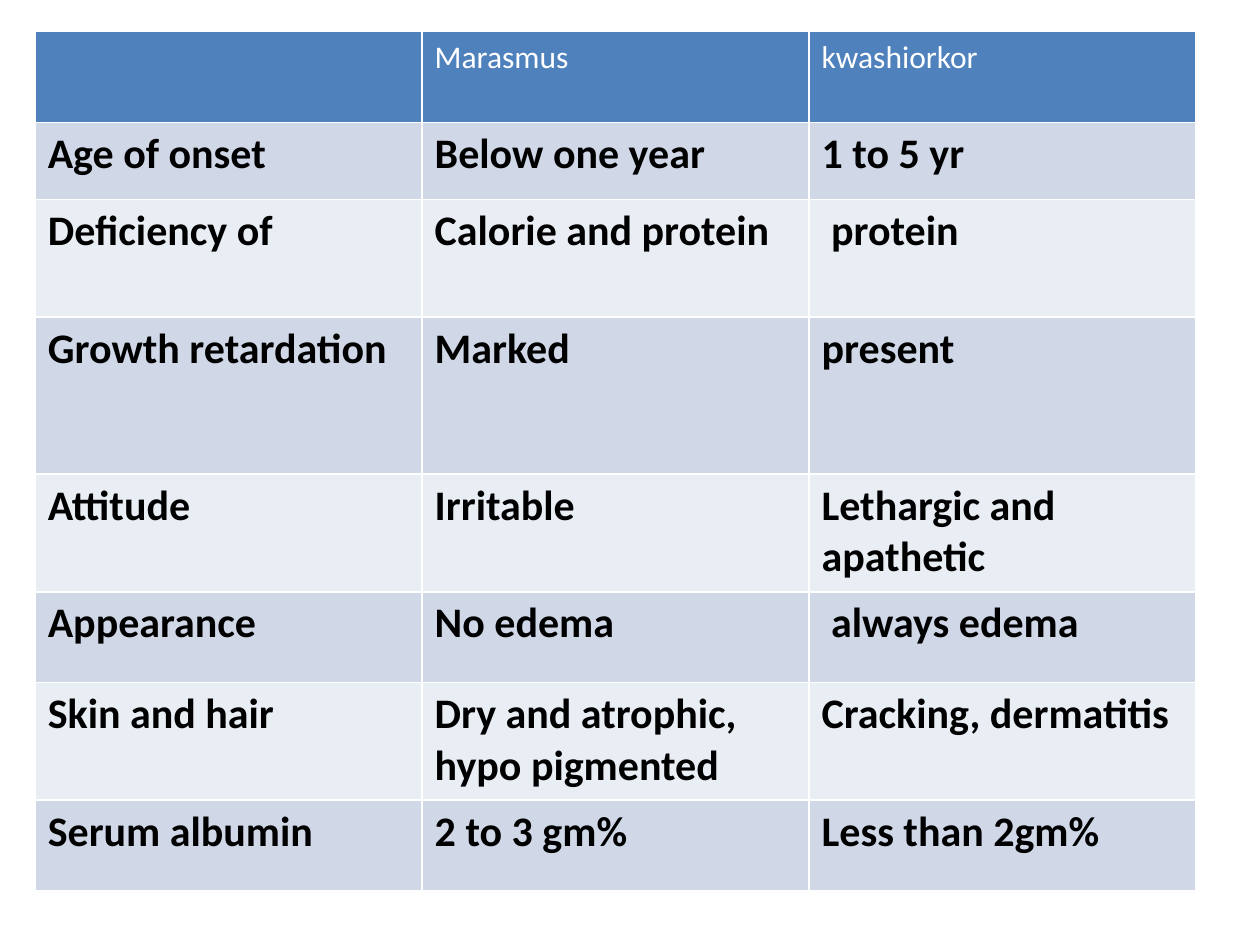
"""Build a slide comparing marasmus with kwashiorkor."""
from dataclasses import dataclass

from pptx import Presentation
from pptx.dml.color import RGBColor
from pptx.util import Cm, Pt


@dataclass(frozen=True)
class Style:
    fill: str
    ink: str
    size: int
    bold: bool


@dataclass(frozen=True)
class Theme:
    font: str = "Calibri"
    header: Style = Style("4F81BD", "FFFFFF", 18, False)
    bands: tuple[Style, ...] = (
        Style("D0D8E8", "000000", 24, True),
        Style("E9EDF4", "000000", 24, True),
    )


@dataclass(frozen=True)
class Row:
    height: float
    cells: tuple[str, str, str]


THEME = Theme()
LEFT, TOP, COLUMN_WIDTH = 0.71, 0.64, 7.8
ROWS = (
    Row(1.83, ("", "Marasmus", "kwashiorkor")),
    Row(1.55, ("Age of onset", "Below one year", "1 to 5 yr")),
    Row(2.37, ("Deficiency of", "Calorie and protein", " protein")),
    Row(3.17, ("Growth retardation", "Marked", "present")),
    Row(2.37, ("Attitude", "Irritable", "Lethargic and apathetic")),
    Row(1.83, ("Appearance", "No edema", " always edema")),
    Row(2.37, ("Skin and hair", "Dry and atrophic, hypo pigmented", "Cracking, dermatitis")),
    Row(1.83, ("Serum albumin", "2 to 3 gm%", "Less than 2gm%")),
)


def row_style(index: int) -> Style:
    """Return the header style, or the alternating style of a body row."""
    return THEME.bands[(index - 1) % len(THEME.bands)] if index else THEME.header


def fill_cell(cell, words: str, style: Style) -> None:
    """Colour one cell and write its words."""
    cell.fill.solid()
    cell.fill.fore_color.rgb = RGBColor.from_string(style.fill)
    if not words:
        return
    span = cell.text_frame.paragraphs[0].add_run()
    span.text = words
    formats = {"name": THEME.font, "size": Pt(style.size), "bold": style.bold}
    for name, value in formats.items():
        setattr(span.font, name, value)
    span.font.color.rgb = RGBColor.from_string(style.ink)


def draw_comparison(page, rows: tuple[Row, ...]) -> None:
    """Draw the comparison table with equal columns."""
    columns = len(rows[0].cells)
    height = sum(row.height for row in rows)
    table = page.shapes.add_table(
        len(rows), columns, Cm(LEFT), Cm(TOP), Cm(COLUMN_WIDTH * columns), Cm(height)
    ).table
    for index, row in enumerate(rows):
        table.rows[index].height = Cm(row.height)
        for column, words in enumerate(row.cells):
            fill_cell(table.cell(index, column), words, row_style(index))


def main() -> None:
    """Create the deck and save it."""
    deck = Presentation()
    deck.slide_width, deck.slide_height = Cm(25.4), Cm(19.05)
    page = deck.slides.add_slide(deck.slide_layouts.get_by_name("Blank"))
    draw_comparison(page, ROWS)
    deck.save("out.pptx")


if __name__ == "__main__":
    main()
